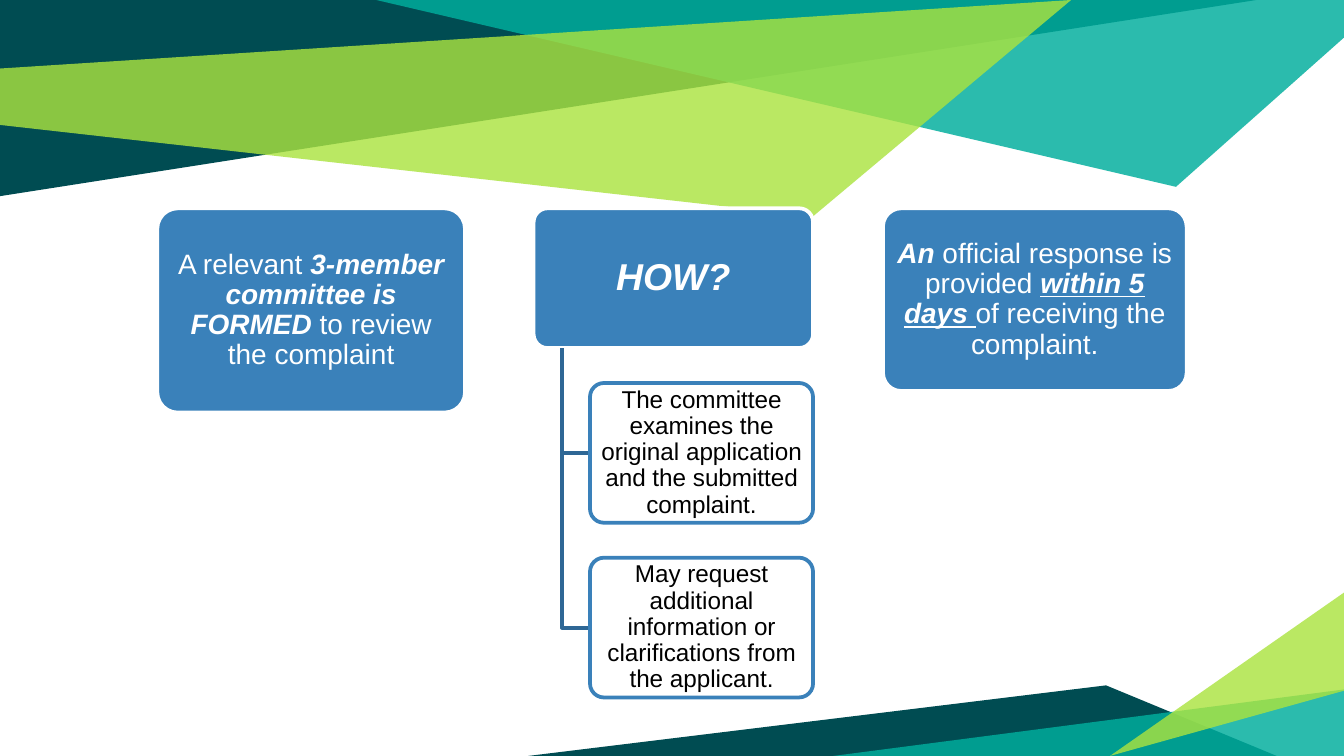
from lxml.etree import SubElement
from pptx import Presentation
from pptx.dml.color import RGBColor
from pptx.enum.shapes import MSO_SHAPE
from pptx.enum.text import MSO_ANCHOR, PP_ALIGN
from pptx.oxml.ns import qn
from pptx.util import Inches, Pt

DARK_TEAL = RGBColor(0x00, 0x4C, 0x52)
TEAL = RGBColor(0x00, 0xAE, 0x9D)
LIME = RGBColor(0xAB, 0xE3, 0x3F)
BLUE = RGBColor(0x3A, 0x81, 0xBA)
DEEP_BLUE = RGBColor(0x2E, 0x67, 0x95)
WHITE = RGBColor(0xFF, 0xFF, 0xFF)
BLACK = RGBColor(0x00, 0x00, 0x00)

PAGE_WIDTH = 10
PAGE_HEIGHT = PAGE_WIDTH * 9 / 16

BACKDROP = [
    (DARK_TEAL, 100, [(0, 0), (0, 1.46), (9.35, 0)]),
    (TEAL, 83, [(2.8, 0), (8.75, 1.39), (PAGE_WIDTH, 0.28), (PAGE_WIDTH, 0)]),
    (LIME, 81, [(0, 0.51), (0, 0.93), (6.05, 1.61), (7.97, 0)]),
    (DARK_TEAL, 100, [(3.93, PAGE_HEIGHT), (9.5, PAGE_HEIGHT), (8.23, 5.1)]),
    (TEAL, 83, [(PAGE_WIDTH, 5.13), (PAGE_WIDTH, PAGE_HEIGHT), (6.2, PAGE_HEIGHT)]),
    (LIME, 81, [(PAGE_WIDTH, 5.14), (PAGE_WIDTH, 4.41), (8.26, PAGE_HEIGHT)]),
]

TOP = 1.55
STEP_HEIGHT = 1.04
STEP_PITCH = 1.3
STEP_LEFT = 4.39
TRUNK_LEFT = 4.18

STAGES = [
    (1.17, 2.29, 1.52, 15, [
        ("A relevant ", ""),
        ("3-member committee is FORMED ", "bi"),
        ("to review the complaint", ""),
    ]),
    (3.97, 2.08, STEP_HEIGHT, 20, [("HOW?", "bi")]),
    (6.57, 2.26, 1.36, 15, [
        ("An ", "bi"),
        ("official response is provided ", ""),
        ("within 5 days ", "biu"),
        ("of receiving the complaint.", ""),
    ]),
]

STEPS = [
    "The committee examines the original application and the submitted complaint.",
    "May request additional information or clarifications from the applicant.",
]


class SlideBuilder:
    font_name = "Arial"
    line_width = Pt(2)

    def __init__(self, slide):
        self.slide = slide

    def paint(self, shape, color, opacity=100):
        shape.shadow.inherit = False
        shape.fill.solid()
        shape.fill.fore_color.rgb = color
        if opacity < 100:
            fill = shape._element.spPr.find(qn("a:solidFill"))
            SubElement(fill[0], qn("a:alpha")).set("val", str(opacity * 1000))

    def outline(self, shape, color):
        shape.line.color.rgb = color
        shape.line.width = self.line_width

    def path_shape(self, points, close):
        corners = [(Inches(x), Inches(y)) for x, y in points]
        builder = self.slide.shapes.build_freeform(*corners[0], scale=1.0)
        builder.add_line_segments(corners[1:], close=close)
        return builder.convert_to_shape()

    def polygon(self, points, color, opacity):
        shape = self.path_shape(points, True)
        self.paint(shape, color, opacity)
        shape.line.fill.background()

    def branch(self, points):
        shape = self.path_shape(points, False)
        shape.shadow.inherit = False
        shape.fill.background()
        self.outline(shape, DEEP_BLUE)

    def box(self, left, top, width, height, spans, size, fill, line, text_color, opacity=100):
        shape = self.slide.shapes.add_shape(
            MSO_SHAPE.ROUNDED_RECTANGLE,
            Inches(left), Inches(top), Inches(width), Inches(height))
        shape.adjustments[0] = 0.1
        self.paint(shape, fill, opacity)
        self.outline(shape, line)
        frame = shape.text_frame
        frame.word_wrap = True
        frame.vertical_anchor = MSO_ANCHOR.MIDDLE
        frame.margin_left = frame.margin_right = Inches(0.03)
        frame.margin_top = frame.margin_bottom = Inches(0.02)
        para = frame.paragraphs[0]
        para.alignment = PP_ALIGN.CENTER
        para.line_spacing = 0.9
        for text, style in spans:
            span = para.add_run()
            span.text = text
            span.font.name = self.font_name
            span.font.size = Pt(size)
            span.font.color.rgb = text_color
            span.font.bold = "b" in style
            span.font.italic = "i" in style
            span.font.underline = "u" in style


def main():
    deck = Presentation()
    deck.slide_width = Inches(PAGE_WIDTH)
    deck.slide_height = Inches(PAGE_HEIGHT)
    page = SlideBuilder(deck.slides.add_slide(deck.slide_layouts[6]))

    for color, opacity, points in BACKDROP:
        page.polygon(points, color, opacity)

    for left, width, height, size, spans in STAGES:
        page.box(left, TOP, width, height, spans, size, BLUE, WHITE, WHITE)

    trunk_top = TOP + STEP_HEIGHT
    for number, text in enumerate(STEPS, start=1):
        top = TOP + number * STEP_PITCH
        middle = top + STEP_HEIGHT / 2
        page.branch([(TRUNK_LEFT, trunk_top), (TRUNK_LEFT, middle), (STEP_LEFT, middle)])
        page.box(STEP_LEFT, top, 1.66, STEP_HEIGHT, [(text, "")], 13,
                 WHITE, BLUE, BLACK, opacity=90)

    deck.save("out.pptx")


if __name__ == "__main__":
    main()
